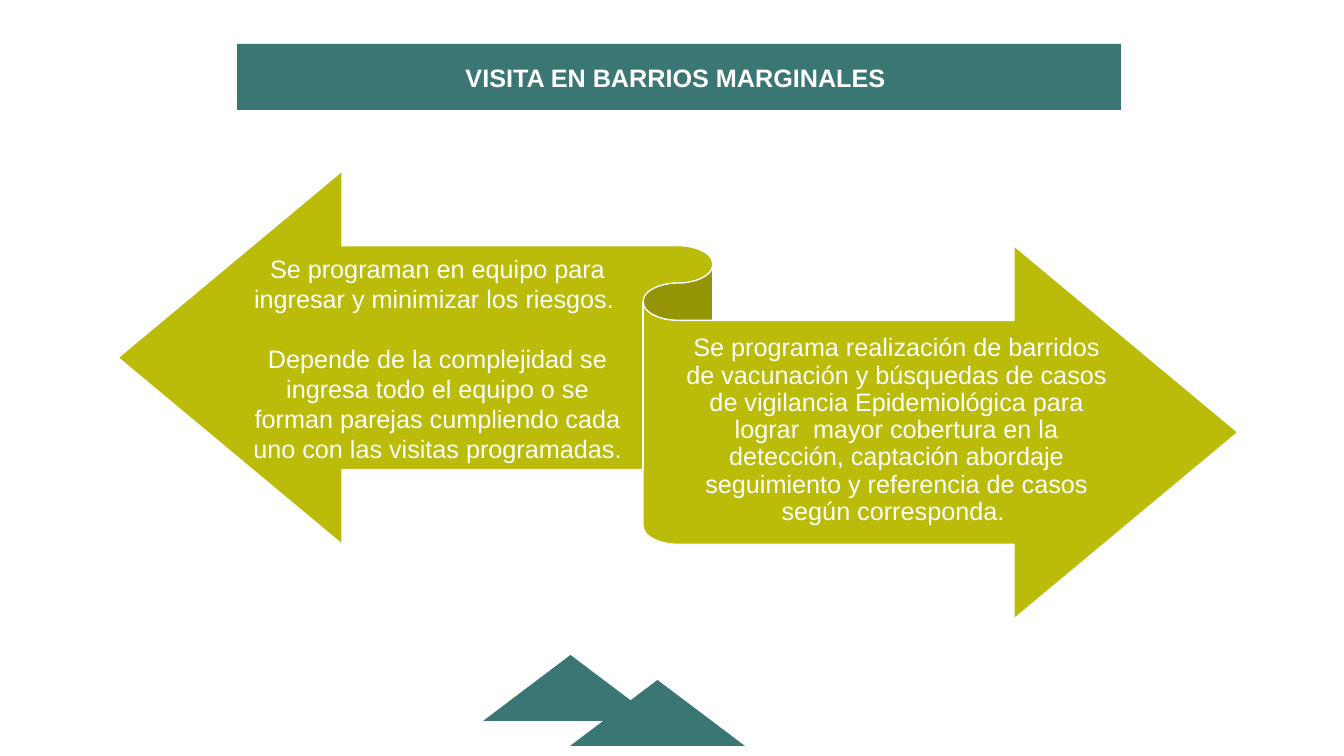
import pptx
import pptx.dml.color
import pptx.enum.shapes
import pptx.enum.text
import pptx.util

PX = 914400 / 50.4
SHAPES = pptx.enum.shapes.MSO_SHAPE
TEAL, OLIVE, WHITE = "3A7673", "BBBB09", "FFFFFF"

TITLE = "VISITA EN BARRIOS MARGINALES "
TEAMWORK = [
    "Se programan en equipo para ingresar y minimizar los riesgos. ",
    "Depende de la complejidad se ingresa todo el equipo o se forman parejas "
    "cumpliendo cada uno con las visitas programadas. ",
]
SWEEPS = [
    "Se programa realización de barridos de vacunación y búsquedas de casos de "
    "vigilancia Epidemiológica para lograr  mayor cobertura en la detección, "
    "captación abordaje seguimiento y referencia de casos según corresponda. "
]


def px(length):
    return pptx.util.Emu(round(length * PX))


def color(hex_value):
    return pptx.dml.color.RGBColor.from_string(hex_value)


def add_shape(slide, kind, box, fill, outline=None):
    shape = slide.shapes.add_shape(kind, *map(px, box))
    shape.shadow.inherit = False
    shape.fill.solid()
    shape.fill.fore_color.rgb = color(fill)
    if outline:
        shape.line.color.rgb = color(outline)
        shape.line.width = pptx.util.Pt(2)
    else:
        shape.line.fill.background()
    return shape


def write(frame, paragraphs, *, bold=False, line_spacing=1.0, gap=0, margins=(0, 7, 0, 8)):
    """Fill a text frame with centred paragraphs; margins run left, top, right, bottom."""
    frame.word_wrap = True
    frame.vertical_anchor = pptx.enum.text.MSO_ANCHOR.MIDDLE
    (frame.margin_left, frame.margin_top,
     frame.margin_right, frame.margin_bottom) = map(px, margins)
    for index, text in enumerate(paragraphs):
        paragraph = frame.add_paragraph() if index else frame.paragraphs[0]
        paragraph.alignment = pptx.enum.text.PP_ALIGN.CENTER
        paragraph.line_spacing = line_spacing
        if index:
            paragraph.space_before = pptx.util.Pt(gap)
        run = paragraph.add_run()
        run.text = text
        run.font.name = "Arial"
        run.font.size = pptx.util.Pt(36)
        run.font.bold = bold
        run.font.color.rgb = color(WHITE)


def add_banner(slide, box):
    banner = add_shape(slide, SHAPES.RECTANGLE, box, TEAL)
    write(banner.text_frame, [TITLE], bold=True, margins=(3, 3, 3, 3))


def add_ribbon(slide, box):
    """Draw the two-headed ribbon with one text on each half."""
    left, top, width, height = box
    add_shape(slide, SHAPES.LEFT_RIGHT_RIBBON, box, OLIVE, outline=WHITE)
    halves = [
        (135, 78, 369, TEAMWORK, {"gap": 42}),
        (560, 150, 437, SWEEPS, {"line_spacing": 0.9}),
    ]
    for dx, dy, text_width, paragraphs, style in halves:
        half = slide.shapes.add_textbox(px(left + dx), px(top + dy), px(text_width), px(220))
        write(half.text_frame, paragraphs, **style)


def add_peaks(slide, box):
    """Place two equal triangles at opposite corners of the box."""
    left, top, width, height = box
    peak_width, peak_height = 175, 66
    add_shape(slide, SHAPES.ISOSCELES_TRIANGLE,
              (left + width - peak_width, top + height - peak_height, peak_width, peak_height), TEAL)
    add_shape(slide, SHAPES.ISOSCELES_TRIANGLE, (left, top, peak_width, peak_height), TEAL)


def main():
    deck = pptx.Presentation()
    deck.slide_width, deck.slide_height = px(1344), px(756)
    slide = deck.slides.add_slide(deck.slide_layouts[6])
    add_banner(slide, (237, 44, 884, 66))
    add_ribbon(slide, (118, 171, 1120, 448))
    add_peaks(slide, (483, 655, 262, 91))
    deck.save("out.pptx")


if __name__ == "__main__":
    main()
